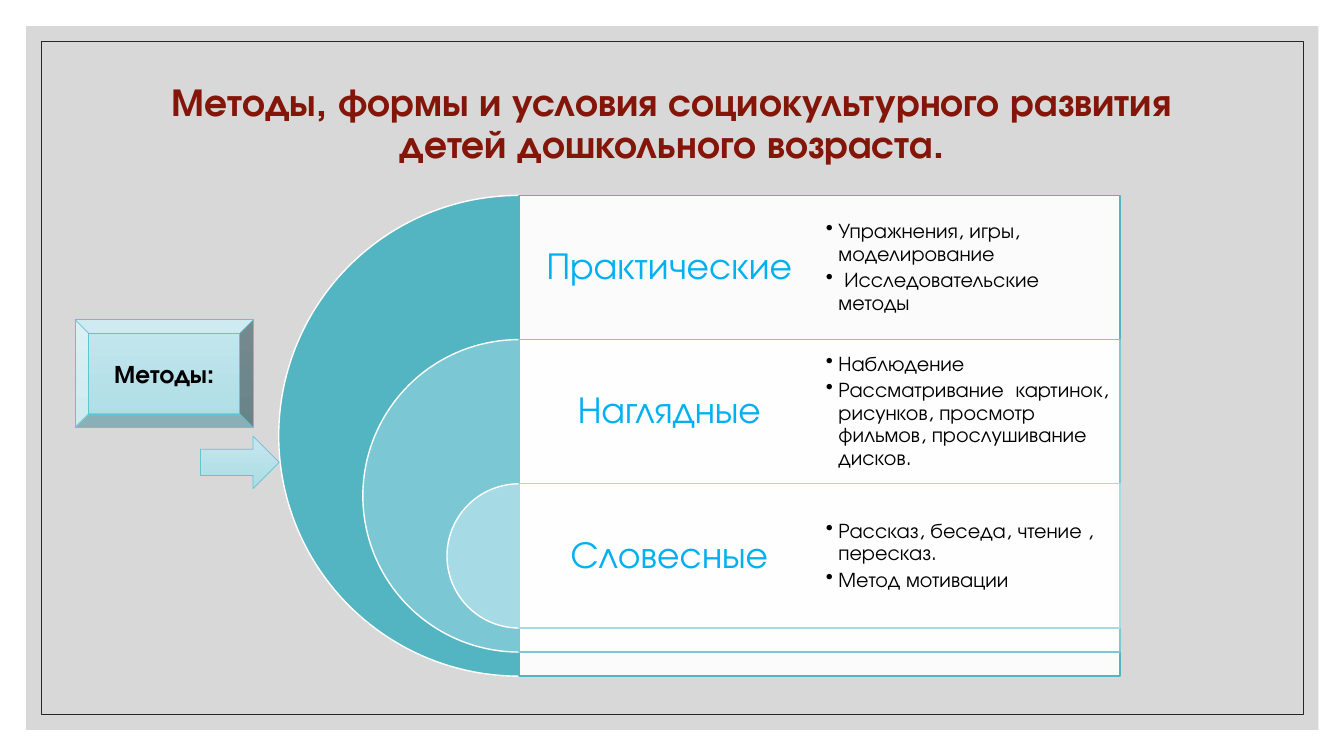
from dataclasses import dataclass
from lxml.etree import SubElement
from pptx import Presentation
from pptx.dml.color import RGBColor
from pptx.enum.shapes import MSO_SHAPE as SHAPE
from pptx.enum.text import MSO_ANCHOR as ANCHOR, PP_ALIGN as ALIGN
from pptx.oxml.ns import qn
from pptx.util import Pt


@dataclass(frozen=True)
class Theme:
    font: str = "TeX Gyre Adventor"
    white: str = "FFFFFF"
    black: str = "000000"
    panel: str = "BFBFBF"
    frame: str = "262626"
    title: str = "841609"
    heading: str = "00B0F0"
    rings: tuple = ("53B4C2", "7CC7D4", "A6DAE4")
    gradient: tuple = ("C4E7EE", "ADDCE5")
    edge: str = "5CC6D6"
    title_size: float = 28
    heading_size: float = 27
    label_size: float = 18
    body_size: float = 15


T = Theme()
rgb = RGBColor.from_string

prs = Presentation()
prs.slide_width, prs.slide_height = Pt(960), Pt(540)
s = prs.slides.add_slide(prs.slide_layouts[6])


def add_shape(kind, x, y, w, h, fill=None, alpha=None, line=None, weight=1):
    sp = s.shapes.add_shape(kind, Pt(x), Pt(y), Pt(w), Pt(h))
    sp.shadow.inherit = False
    if isinstance(fill, tuple):
        sp.fill.gradient()
        sp.fill.gradient_angle = 270
        for stop, color in zip(sp.fill.gradient_stops, fill):
            stop.color.rgb = rgb(color)
    elif fill:
        sp.fill.solid()
        sp.fill.fore_color.rgb = rgb(fill)
    else:
        sp.fill.background()
    if alpha:
        color = sp._element.spPr.find(qn("a:solidFill"))[0]
        SubElement(color, qn("a:alpha"), val=str(alpha * 1000))
    if line:
        sp.line.color.rgb = rgb(line)
        sp.line.width = Pt(weight)
    else:
        sp.line.fill.background()
    return sp


def add_text(text, box=None, sp=None, size=T.body_size, color=T.black, bold=False,
             align=ALIGN.CENTER, spacing=0.9, inset=7.2, bullet=False):
    if sp is None:
        sp = s.shapes.add_textbox(*map(Pt, box))
    tf = sp.text_frame
    tf.word_wrap = True
    tf.vertical_anchor = ANCHOR.MIDDLE
    tf.margin_left = tf.margin_right = tf.margin_top = tf.margin_bottom = Pt(inset)
    for i, line in enumerate(text.split("\n")):
        p = tf.add_paragraph() if i else tf.paragraphs[0]
        p.alignment, p.line_spacing = align, spacing
        if bullet:
            p.space_after = Pt(2.5)
            pPr = p._p.get_or_add_pPr()
            pPr.set("marL", str(Pt(9)))
            pPr.set("indent", str(-Pt(9)))
            SubElement(pPr, qn("a:buChar"), char="•")
        r = p.add_run()
        r.text = line
        r.font.name, r.font.size, r.font.bold = T.font, Pt(size), bold
        r.font.color.rgb = rgb(color)


add_shape(SHAPE.RECTANGLE, 18.7, 18.7, 923, 502.6, fill=T.panel, alpha=60)
add_shape(SHAPE.RECTANGLE, 29.5, 29.5, 901.5, 481, line=T.frame, weight=0.5)
add_text("Методы, формы и условия социокультурного развития детей дошкольного возраста.",
         box=(84, 50, 792, 78), size=T.title_size, color=T.title, bold=True)

methods = [
    ("Практические", "Упражнения, игры, моделирование\n Исследовательские методы"),
    ("Наглядные", "Наблюдение\nРассматривание  картинок, рисунков, просмотр фильмов, "
                  "прослушивание дисков."),
    ("Словесные", "Рассказ, беседа, чтение , пересказ.\nМетод мотивации"),
]
axis, top, row, step, column = 370.8, 139.6, 103, 120.2, 214.6

for i, ((heading, items), color) in enumerate(zip(methods, T.rings)):
    y = top + i * row
    size = row + (len(methods) - 1 - i) * step
    pie = add_shape(SHAPE.PIE, axis - size / 2, y, size, size, fill=color, line=T.white)
    pie.adjustments[0], pie.adjustments[1] = 54, 162
    add_shape(SHAPE.RECTANGLE, axis, y, 2 * column, size, fill=T.white, alpha=90, line=color)
    add_text(heading, box=(axis, y, column, row), size=T.heading_size, color=T.heading, inset=8)
    add_text(items, box=(axis + column, y, column, row), align=ALIGN.LEFT, inset=4.5, bullet=True)

add_shape(SHAPE.RIGHT_ARROW, 143.2, 311.6, 56.3, 37.4, fill=T.gradient, line=T.edge, weight=0.5)
label = add_shape(SHAPE.BEVEL, 53.6, 228.4, 127.4, 77, fill=T.gradient, line=T.edge, weight=0.5)
add_text("Методы:", sp=label, size=T.label_size, bold=True, spacing=1.0)

prs.save("out.pptx")
